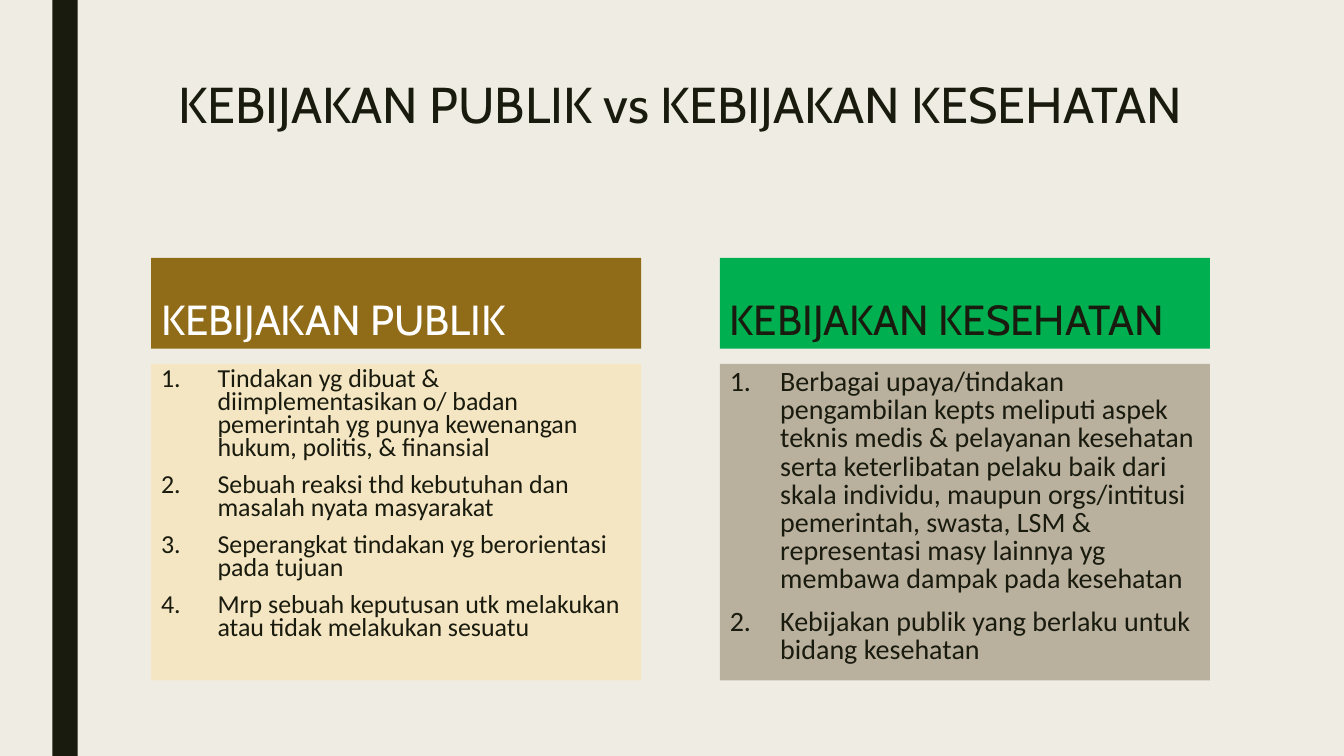
from lxml.etree import SubElement
from pptx import Presentation
from pptx.dml.color import RGBColor
from pptx.enum.shapes import MSO_SHAPE as SHAPE
from pptx.enum.text import MSO_ANCHOR as ANCHOR, PP_ALIGN as ALIGN
from pptx.oxml.ns import qn
from pptx.util import Inches, Pt

COLORS = {
    "paper": "EFEDE3", "ink": "191B0E", "white": "FFFFFF",
    "brown": "906B18", "cream": "F5E6C3",
    "green": "00B050", "taupe": "BAB09E",
}
HEADING_FONT, BODY_FONT = "Cabin", "Calibri"
SLIDE_W, SLIDE_H = 13.33, 7.5
LEFT, CONTENT_W = 1.5, 10.5
COLUMN_W = 4.86
COLUMN_STEP = CONTENT_W - COLUMN_W
COLUMN_TOP, COLUMN_H = 2.56, 4.19
HEADER_H, HEADER_GAP = 0.9, 0.15

COLUMNS = [
    {
        "heading": "KEBIJAKAN PUBLIK",
        "header_fill": "brown", "header_ink": "white", "body_fill": "cream",
        "size": 18.5, "spacing": 0.74, "indent": 0.56,
        "items": [
            "Tindakan yg dibuat & diimplementasikan o/ badan pemerintah yg punya "
            "kewenangan hukum, politis, & finansial",
            "Sebuah reaksi thd kebutuhan dan masalah nyata masyarakat",
            "Seperangkat tindakan yg berorientasi pada tujuan",
            "Mrp sebuah keputusan utk melakukan atau tidak melakukan sesuatu",
        ],
    },
    {
        "heading": "KEBIJAKAN KESEHATAN",
        "header_fill": "green", "header_ink": "ink", "body_fill": "taupe",
        "size": 20, "spacing": 0.84, "indent": 0.5,
        "items": [
            "Berbagai upaya/tindakan pengambilan kepts meliputi aspek teknis medis "
            "& pelayanan kesehatan serta keterlibatan pelaku baik dari skala "
            "individu, maupun orgs/intitusi pemerintah, swasta, LSM & representasi "
            "masy lainnya yg membawa dampak pada kesehatan",
            "Kebijakan publik yang berlaku untuk bidang kesehatan",
        ],
    },
]


def rgb(name):
    return RGBColor.from_string(COLORS[name])


def add_box(s, box, fill):
    sp = s.shapes.add_shape(SHAPE.RECTANGLE, *map(Inches, box))
    sp.shadow.inherit = False
    sp.fill.solid()
    sp.fill.fore_color.rgb = rgb(fill)
    sp.line.fill.background()
    return sp


def write(sp, lines, font, size, color, spacing, align=ALIGN.LEFT, anchor=ANCHOR.TOP):
    tf = sp.text_frame
    tf.word_wrap = True
    tf.vertical_anchor = anchor
    tf.text = "\n".join(lines)
    for p in tf.paragraphs:
        p.alignment = align
        p.line_spacing = spacing
        for r in p.runs:
            r.font.name = font
            r.font.size = Pt(size)
            r.font.color.rgb = rgb(color)
    return tf.paragraphs


def number(p, indent):
    p.space_before = Pt(10)
    pPr = p._p.get_or_add_pPr()
    pPr.set("marL", str(Inches(indent)))
    pPr.set("indent", str(-Inches(indent)))
    SubElement(pPr, qn("a:buFont"), typeface="+mj-lt")
    SubElement(pPr, qn("a:buAutoNum"), type="arabicPeriod")


def add_title(s, box, text):
    sp = s.shapes.add_textbox(*map(Inches, box))
    write(sp, [text], HEADING_FONT, 36, "ink", 0.89, ALIGN.CENTER)


def add_column(s, box, column):
    x, y, w, h = box
    header = add_box(s, (x, y, w, HEADER_H), column["header_fill"])
    write(header, [column["heading"]], HEADING_FONT, 30, column["header_ink"], 0.84,
          anchor=ANCHOR.BOTTOM)
    offset = HEADER_H + HEADER_GAP
    body = add_box(s, (x, y + offset, w, h - offset), column["body_fill"])
    for p in write(body, column["items"], BODY_FONT, column["size"], "ink",
                   column["spacing"]):
        number(p, column["indent"])


def main():
    prs = Presentation()
    prs.slide_width, prs.slide_height = Inches(SLIDE_W), Inches(SLIDE_H)
    s = prs.slides.add_slide(prs.slide_layouts[6])
    s.background.fill.solid()
    s.background.fill.fore_color.rgb = rgb("paper")
    add_box(s, (0.52, 0, 0.25, SLIDE_H), "ink")
    add_title(s, (LEFT, 0.75, CONTENT_W, 1.62), "KEBIJAKAN PUBLIK vs KEBIJAKAN KESEHATAN")
    for i, column in enumerate(COLUMNS):
        add_column(s, (LEFT + i * COLUMN_STEP, COLUMN_TOP, COLUMN_W, COLUMN_H), column)
    prs.save("out.pptx")


if __name__ == "__main__":
    main()
